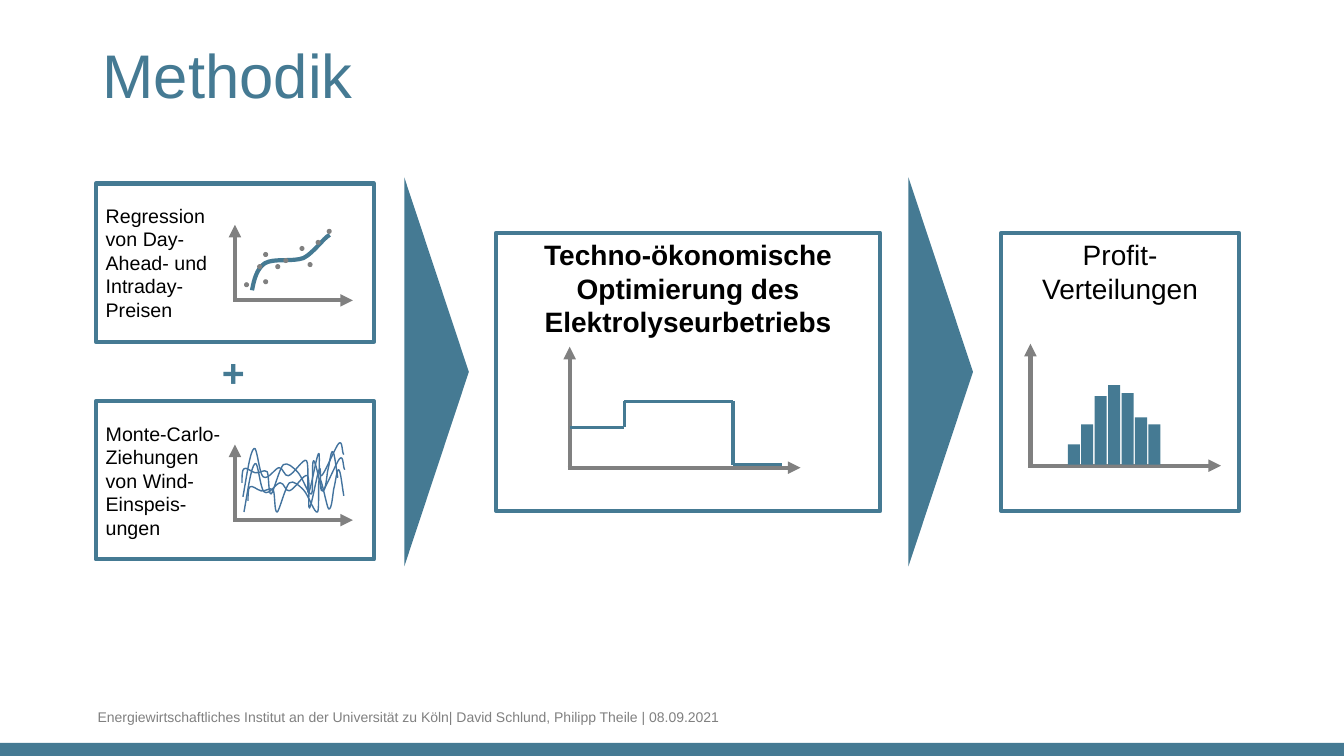
from dataclasses import dataclass
from itertools import pairwise

from lxml.etree import SubElement
from pptx import Presentation
from pptx.dml.color import RGBColor
from pptx.enum.shapes import MSO_CONNECTOR as Connector, MSO_SHAPE as Preset
from pptx.enum.text import MSO_ANCHOR as Anchor, PP_ALIGN as Align
from pptx.oxml.ns import qn
from pptx.util import Inches, Pt


@dataclass(frozen=True)
class Theme:
    font: str = "Arial"
    teal: RGBColor = RGBColor(0x45, 0x7A, 0x93)
    blue: RGBColor = RGBColor(0x43, 0x73, 0x9E)
    gray: RGBColor = RGBColor(0x80, 0x80, 0x80)
    black: RGBColor = RGBColor(0, 0, 0)
    white: RGBColor = RGBColor(0xFF, 0xFF, 0xFF)
    title: int = 44
    plus: int = 28
    heading: int = 20
    body: int = 14
    footer: int = 10
    thick: float = 3
    medium: float = 2.25
    thin: float = 1


THEME = Theme()

# Curves: a start point, then two control points and an end point per segment
TREND = [
    (2.5, 2.88), (2.52, 2.77), (2.55, 2.66), (2.63, 2.61), (2.72, 2.56),
    (2.9, 2.6), (3.01, 2.56), (3.11, 2.51), (3.21, 2.36), (3.27, 2.33),
]
OBSERVATIONS = [
    (3.24, 2.27), (3.05, 2.6), (2.61, 2.77), (2.73, 2.62), (2.61, 2.5),
    (2.81, 2.56), (2.55, 2.62), (2.42, 2.8), (3.13, 2.38), (2.97, 2.44),
]
RISING_DRAW = [
    (2.41, 4.93), (2.45, 4.71), (2.48, 4.48), (2.52, 4.45), (2.55, 4.42),
    (2.57, 4.7), (2.61, 4.73), (2.66, 4.77), (2.73, 4.64), (2.77, 4.64),
    (2.81, 4.64), (2.82, 4.73), (2.86, 4.72), (2.91, 4.71), (3.01, 4.54),
    (3.04, 4.57), (3.07, 4.6), (3.04, 4.9), (3.06, 4.89), (3.08, 4.88),
    (3.14, 4.52), (3.16, 4.5), (3.18, 4.47), (3.15, 4.74), (3.19, 4.72),
    (3.22, 4.7), (3.33, 4.43), (3.36, 4.4), (3.4, 4.36), (3.39, 4.49),
    (3.41, 4.51),
]
FALLING_DRAW = [
    (2.46, 4.97), (2.46, 4.91), (2.46, 4.84), (2.48, 4.83), (2.5, 4.81),
    (2.55, 4.86), (2.59, 4.87), (2.63, 4.88), (2.68, 4.83), (2.71, 4.86),
    (2.73, 4.9), (2.72, 5.09), (2.75, 5.08), (2.77, 5.07), (2.83, 4.83),
    (2.87, 4.79), (2.91, 4.76), (2.97, 4.82), (3.01, 4.86), (3.06, 4.91),
    (3.12, 5.1), (3.15, 5.08), (3.17, 5.06), (3.15, 4.75), (3.17, 4.75),
    (3.19, 4.74), (3.24, 5.03), (3.26, 5.05), (3.29, 5.06), (3.3, 4.91),
    (3.31, 4.85), (3.33, 4.78), (3.34, 4.65), (3.36, 4.66), (3.38, 4.68),
    (3.39, 4.8), (3.41, 4.92),
]
WIND_DRAWS = [
    (RISING_DRAW, 0, 0), (RISING_DRAW, 0.01, 0.15),
    (FALLING_DRAW, 0, 0), (FALLING_DRAW, -0.06, -0.18),
]
OPERATION_STEPS = [
    (5.65, 4.24), (6.19, 4.24), (6.19, 3.98),
    (7.27, 3.98), (7.27, 4.61), (7.76, 4.61),
]
PROFIT_BARS = [0.2, 0.4, 0.68, 0.79, 0.71, 0.47, 0.4]


def write(frame, text, size, color, align=Align.LEFT, bold=False, wrap=True):
    frame.word_wrap = wrap
    frame.text = text
    for paragraph in frame.paragraphs:
        paragraph.alignment = align
        font = paragraph.runs[0].font
        font.name, font.size, font.bold = THEME.font, Pt(size), bold
        font.color.rgb = color


def add_label(shapes, box, text, size, color, **style):
    label = shapes.add_textbox(*map(Inches, box))
    write(label.text_frame, text, size, color, **style)
    return label


def add_solid(shapes, preset, box, color):
    solid = shapes.add_shape(preset, *map(Inches, box))
    solid.shadow.inherit = False
    solid.fill.solid()
    solid.fill.fore_color.rgb = color
    solid.line.fill.background()
    return solid


def add_panel(slide, box, text, size, anchor=Anchor.TOP, **style):
    """Start a group with a framed box and return the group's shapes."""
    members = slide.shapes.add_group_shape().shapes
    panel = add_solid(members, Preset.RECTANGLE, box, THEME.white)
    panel.line.color.rgb = THEME.teal
    panel.line.width = Pt(THEME.thick)
    panel.text_frame.vertical_anchor = anchor
    write(panel.text_frame, text, size, THEME.black, **style)
    return members


def add_line(shapes, start, end, color, width, arrow=False):
    line = shapes.add_connector(Connector.STRAIGHT, *map(Inches, (*start, *end)))
    line.line.color.rgb = color
    line.line.width = Pt(width)
    if arrow:
        SubElement(line.line._get_or_add_ln(), qn("a:tailEnd"), type="triangle")
    SubElement(line._element.spPr, qn("a:effectLst"))


def add_axes(shapes, x, y, width, height):
    for start, end in (((x - 0.02, y), (x + width, y)), ((x, y), (x, y - height))):
        add_line(shapes, start, end, THEME.gray, THEME.thick, arrow=True)


def add_curve(shapes, points, color, width, dx=0, dy=0):
    start, *rest = [(Inches(x + dx), Inches(y + dy)) for x, y in points]
    builder = shapes.build_freeform(*start)
    builder.add_line_segments(rest, close=False)
    curve = builder.convert_to_shape()
    curve.shadow.inherit = False
    curve.fill.background()
    curve.line.color.rgb = color
    curve.line.width = Pt(width)
    # Join every three straight segments into one Bézier segment
    outline = curve._element.find(".//" + qn("a:path"))
    segments = outline.findall(qn("a:lnTo"))
    for first in range(0, len(segments), 3):
        bezier = SubElement(outline, qn("a:cubicBezTo"))
        for segment in segments[first:first + 3]:
            bezier.append(segment[0])
            outline.remove(segment)


def add_stage_arrow(slide, left):
    arrow = add_solid(slide.shapes, Preset.ISOSCELES_TRIANGLE,
                      (left, 3.37, 3.86, 0.64), THEME.teal)
    arrow.rotation = 90


def main():
    deck = Presentation()
    deck.slide_width, deck.slide_height = Inches(13.33), Inches(7.5)
    slide = deck.slides.add_slide(deck.slide_layouts[6])

    # Footer and title
    add_solid(slide.shapes, Preset.RECTANGLE, (0, 7.37, 13.33, 0.13), THEME.teal)
    add_label(slide.shapes, (0.87, 6.98, 8.56, 0.27),
              "Energiewirtschaftliches Institut an der Universität zu Köln"
              "| David Schlund, Philipp Theile | 08.09.2021",
              THEME.footer, THEME.gray)
    title = add_label(slide.shapes, (0.92, 0.4, 11.5, 1.45), "Methodik",
                      THEME.title, THEME.teal)
    title.text_frame.paragraphs[0].line_spacing = 0.9

    add_stage_arrow(slide, 2.4)

    # Price regression
    regression = add_panel(slide, (0.95, 1.82, 2.76, 1.57),
                           "Regression\nvon Day-\nAhead- und\nIntraday-\nPreisen",
                           THEME.body, Anchor.MIDDLE)
    add_axes(regression, 2.33, 2.98, 1.17, 0.75)
    add_curve(regression, TREND, THEME.teal, THEME.thick)
    for x, y in OBSERVATIONS:
        add_solid(regression, Preset.OVAL, (x, y, 0.05, 0.05), THEME.gray)

    # Wind feed-in draws
    wind = add_panel(slide, (0.95, 3.98, 2.76, 1.57),
                     "Monte-Carlo-\nZiehungen\nvon Wind-\nEinspeis-\nungen",
                     THEME.body, Anchor.MIDDLE)
    add_axes(wind, 2.33, 5.16, 1.17, 0.75)
    for draw, dx, dy in WIND_DRAWS:
        add_curve(wind, draw, THEME.blue, THEME.thin, dx, dy)

    # Optimised electrolyser operation
    optimisation = add_panel(slide, (4.92, 2.31, 3.81, 2.76),
                             "Techno-ökonomische Optimierung des Elektrolyseurbetriebs",
                             THEME.heading, align=Align.CENTER, bold=True)
    add_axes(optimisation, 5.65, 4.64, 2.29, 1.2)
    for start, end in pairwise(OPERATION_STEPS):
        add_line(optimisation, start, end, THEME.teal, THEME.medium)

    # Profit distribution
    profit = add_panel(slide, (9.93, 2.31, 2.36, 2.76), "Profit-Verteilungen",
                       THEME.heading, align=Align.CENTER)
    add_axes(profit, 10.22, 4.62, 1.89, 1.21)
    bar_step = 0.8 / (len(PROFIT_BARS) - 1)
    for index, height in enumerate(PROFIT_BARS):
        add_solid(profit, Preset.RECTANGLE,
                  (10.59 + index * bar_step, 4.61 - height, 0.12, height), THEME.teal)

    add_stage_arrow(slide, 7.4)
    add_label(slide.shapes, (2.1, 3.41, 0.43, 0.57), "+", THEME.plus, THEME.teal,
              align=Align.CENTER, bold=True, wrap=False)

    deck.save("out.pptx")


if __name__ == "__main__":
    main()
